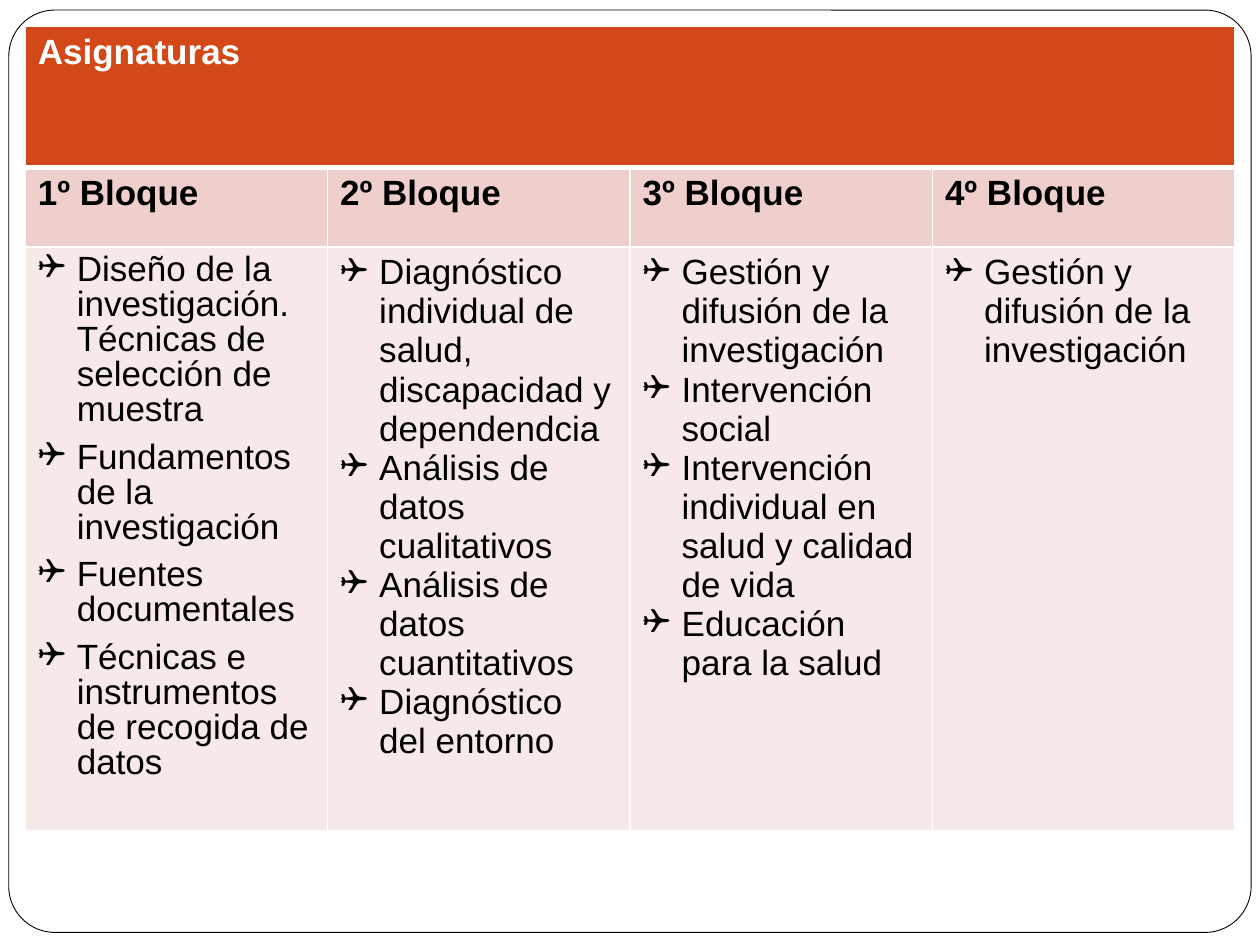
import lxml.etree
import pptx
import pptx.dml.color
import pptx.enum.shapes
import pptx.oxml.ns
import pptx.util

Inches, Pt = pptx.util.Inches, pptx.util.Pt
RGBColor, qn = pptx.dml.color.RGBColor, pptx.oxml.ns.qn

WHITE = RGBColor(0xFF, 0xFF, 0xFF)
BLACK = RGBColor(0, 0, 0)
ORANGE = RGBColor(0xD3, 0x48, 0x17)
ROSE = RGBColor(0xEF, 0xCF, 0xCC)
PALE = RGBColor(0xF7, 0xE9, 0xE8)

BLOCKS = [
    ("1º Bloque", [
        "Diseño de la investigación. Técnicas de selección de muestra",
        "Fundamentos de la investigación",
        "Fuentes documentales",
        "Técnicas e instrumentos de recogida de datos",
    ]),
    ("2º Bloque", [
        "Diagnóstico individual de salud, discapacidad y dependendcia",
        "Análisis de datos cualitativos",
        "Análisis de datos cuantitativos",
        "Diagnóstico del entorno",
    ]),
    ("3º Bloque", [
        "Gestión y difusión de la investigación",
        "Intervención social",
        "Intervención individual en salud y calidad de vida",
        "Educación para la salud",
    ]),
    ("4º Bloque", ["Gestión y difusión de la investigación"]),
]


def write(para, text, color, bold):
    run = para.add_run()
    run.text = text
    run.font.name = "Arial"
    run.font.size = Pt(20)
    run.font.bold = bold
    run.font.color.rgb = color


def style(cell, fill, top, bottom):
    """Fill the cell and give it white borders, widths in points."""
    cell.fill.solid()
    cell.fill.fore_color.rgb = fill
    props = cell._tc.get_or_add_tcPr()
    sides = [("a:lnL", 1), ("a:lnR", 1), ("a:lnT", top), ("a:lnB", bottom)]
    for spot, (tag, width) in enumerate(sides):
        line = lxml.etree.Element(qn(tag), w=str(Pt(width)))
        solid = lxml.etree.SubElement(line, qn("a:solidFill"))
        lxml.etree.SubElement(solid, qn("a:srgbClr"), val=str(WHITE))
        props.insert(spot, line)


deck = pptx.Presentation()
deck.slide_width, deck.slide_height = Inches(10), Inches(7.5)
slide = deck.slides.add_slide(deck.slide_layouts[6])

# Rounded page frame
frame = slide.shapes.add_shape(
    pptx.enum.shapes.MSO_SHAPE.ROUNDED_RECTANGLE,
    Inches(0.07), Inches(0.08), Inches(9.86), Inches(7.32))
frame.adjustments[0] = 0.05
frame.shadow.inherit = False
frame.fill.solid()
frame.fill.fore_color.rgb = WHITE
frame.line.color.rgb = BLACK
frame.line.width = Pt(0.5)

# Table of subjects
table = slide.shapes.add_table(
    3, len(BLOCKS), Inches(0.2), Inches(0.21), Inches(9.6), Inches(6.38)).table
for row, high in zip(table.rows, (1.12, 0.63, 4.73 - 0.1)):
    row.height = Inches(high)
looks = [(ORANGE, 1, 3), (ROSE, 3, 1), (PALE, 1, 1)]
for row, look in zip(table.rows, looks):
    for cell in row.cells:
        style(cell, *look)

head = table.cell(0, 0)
head.merge(table.cell(0, len(BLOCKS) - 1))
write(head.text_frame.paragraphs[0], "Asignaturas", WHITE, True)

for col, (name, items) in enumerate(BLOCKS):
    table.columns[col].width = Inches(2.4)
    write(table.cell(1, col).text_frame.paragraphs[0], name, BLACK, True)
    body = table.cell(2, col).text_frame
    for spot, item in enumerate(items):
        para = body.add_paragraph() if spot else body.paragraphs[0]
        if col == 0:
            para.line_spacing = 0.9
            para.space_after = Pt(7)
        props = para._p.get_or_add_pPr()
        props.set("marL", str(Inches(0.31)))
        props.set("indent", str(-Inches(0.31)))
        lxml.etree.SubElement(props, qn("a:buFont"), typeface="Wingdings")
        lxml.etree.SubElement(props, qn("a:buChar"), char="❑")
        write(para, item, BLACK, False)

deck.save("out.pptx")
